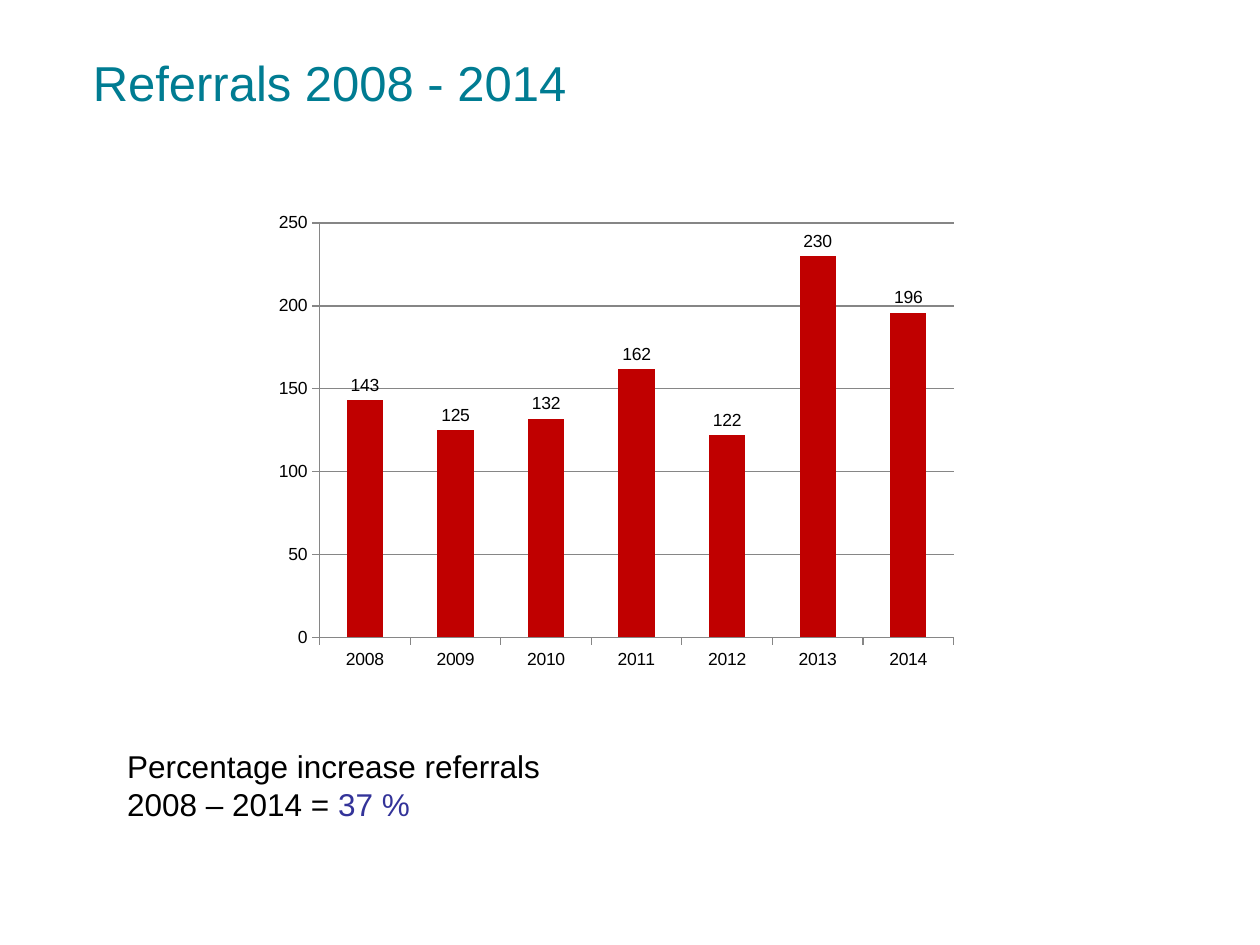
from lxml import etree
from pptx import Presentation
from pptx import util as u
from pptx.chart.data import CategoryChartData
from pptx.dml.color import RGBColor
from pptx.enum import chart as charts, text
from pptx.oxml import parse_xml
from pptx.oxml.ns import nsdecls

TEAL = RGBColor(0x00, 0x7C, 0x92)
BLACK = RGBColor(0x00, 0x00, 0x00)
INDIGO = RGBColor(0x33, 0x33, 0x99)
RED = RGBColor(0xC0, 0x00, 0x00)
GRAY = RGBColor(0x86, 0x86, 0x86)

REFERRALS = {"2008": 143, "2009": 125, "2010": 132, "2011": 162,
             "2012": 122, "2013": 230, "2014": 196}


def add_run(paragraph, content, *, font, size, color=BLACK):
    run = paragraph.add_run()
    run.text = content
    run.font.name = font
    run.font.size = u.Pt(size)
    run.font.color.rgb = color


def set_plot_area(chart, **fractions):
    """Fix the inner plot area, given as fractions of the chart (x, y, w, h)."""
    modes = '<c:layoutTarget val="inner"/><c:xMode val="edge"/><c:yMode val="edge"/>'
    sizes = "".join(f'<c:{key} val="{value}"/>' for key, value in fractions.items())
    layout = parse_xml(f'<c:layout {nsdecls("c")}><c:manualLayout>{modes}{sizes}'
                       '</c:manualLayout></c:layout>')
    plot_area = chart.plots[0]._element.getparent()
    for old_layout in plot_area.findall(etree.QName(layout).text):
        plot_area.remove(old_layout)
    plot_area.insert(0, layout)


class SlideBuilder:
    font = "Arial"

    def __init__(self, slide):
        self.slide = slide

    def text_box(self, left, top, width, height, lines, size,
                 anchor=text.MSO_ANCHOR.TOP):
        """Add a text box; each line is a list of (content, color) runs."""
        box = self.slide.shapes.add_textbox(
            u.Pt(left), u.Pt(top), u.Pt(width), u.Pt(height))
        frame = box.text_frame
        frame.word_wrap = True
        frame.vertical_anchor = anchor
        for index, line in enumerate(lines):
            paragraph = frame.add_paragraph() if index else frame.paragraphs[0]
            for content, color in line:
                add_run(paragraph, content, font=self.font, size=size, color=color)

    def column_chart(self, left, top, width, height, name, values, color):
        data = CategoryChartData()
        data.categories = list(values)
        data.add_series(name, list(values.values()))
        chart = self.slide.shapes.add_chart(
            charts.XL_CHART_TYPE.COLUMN_CLUSTERED,
            u.Pt(left), u.Pt(top), u.Pt(width), u.Pt(height), data).chart
        chart.has_legend = False
        chart.has_title = False
        chart.font.name = self.font
        chart.font.size = u.Pt(10)
        chart.font.color.rgb = BLACK
        set_plot_area(chart, x=0.08, y=0.04, w=0.9, h=0.87)

        plot = chart.plots[0]
        plot.vary_by_categories = False
        plot.gap_width = 150
        fill = plot.series[0].format.fill
        fill.solid()
        fill.fore_color.rgb = color
        plot.has_data_labels = True
        plot.data_labels.show_value = True
        plot.data_labels.position = charts.XL_LABEL_POSITION.OUTSIDE_END

        value_axis = chart.value_axis
        value_axis.minimum_scale = 0
        value_axis.maximum_scale = 250
        value_axis.major_unit = 50
        value_axis.has_major_gridlines = True
        for axis in (chart.category_axis, value_axis):
            axis.major_tick_mark = charts.XL_TICK_MARK.OUTSIDE
            axis.minor_tick_mark = charts.XL_TICK_MARK.NONE
        for part in (chart.category_axis, value_axis, value_axis.major_gridlines):
            part.format.line.color.rgb = GRAY
            part.format.line.width = u.Pt(0.75)


def main():
    presentation = Presentation()
    presentation.slide_width = u.Pt(720)
    presentation.slide_height = u.Pt(540)
    builder = SlideBuilder(presentation.slides.add_slide(presentation.slide_layouts[6]))

    builder.text_box(46, 21.6, 648, 50, [[("Referrals 2008 - 2014", TEAL)]], 28,
                     anchor=text.MSO_ANCHOR.MIDDLE)
    builder.text_box(65.5, 423.4, 300, 51,
                     [[("Percentage increase referrals", BLACK)],
                      [("2008 – 2014 = ", BLACK), ("37 %", INDIGO)]], 18)
    builder.column_chart(150.5, 116.6, 402.5, 272.2, "Series 1", REFERRALS, RED)
    presentation.save("out.pptx")


if __name__ == "__main__":
    main()
